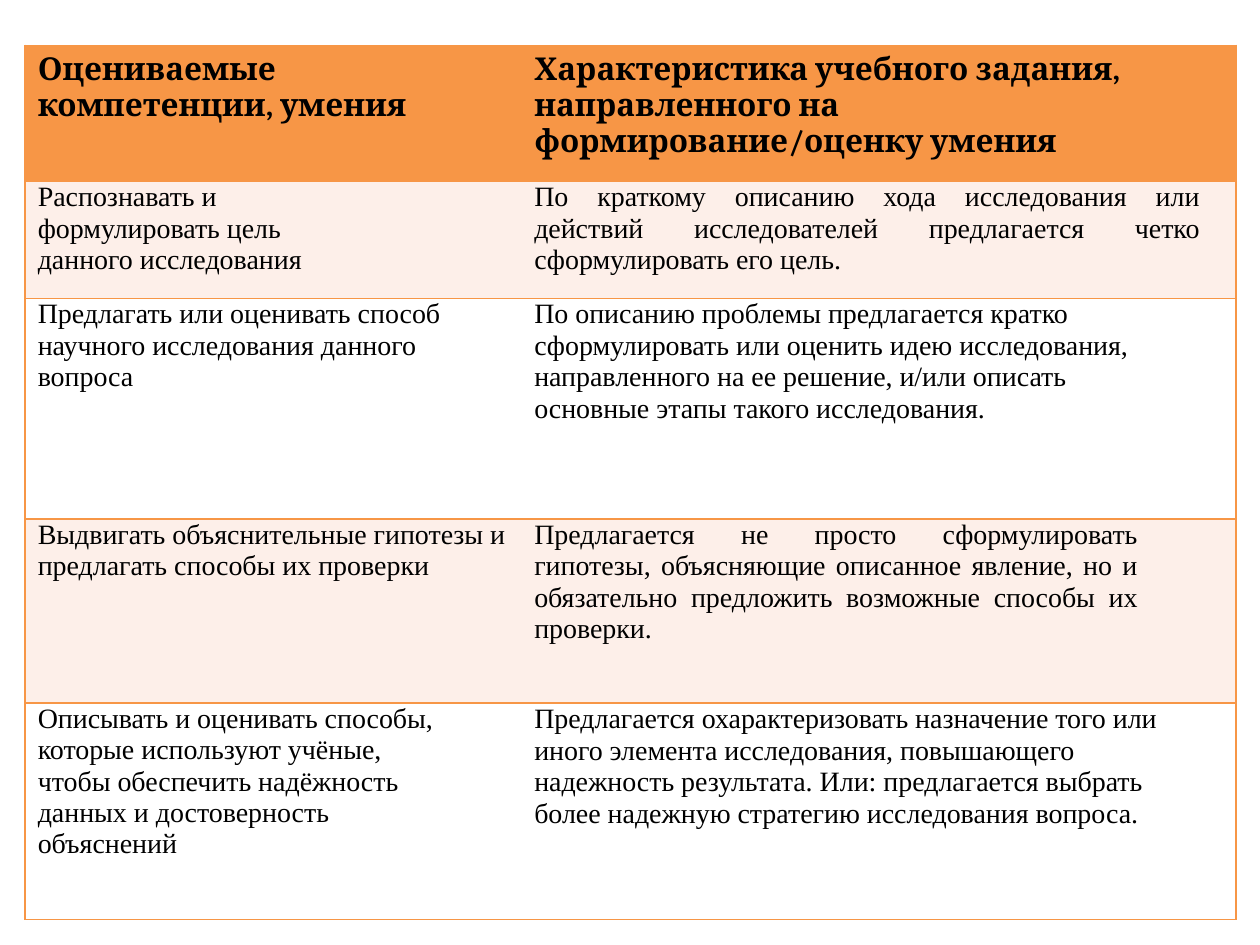
from lxml.etree import SubElement
from pptx import Presentation
from pptx.dml.color import RGBColor as RGB
from pptx.enum.text import PP_ALIGN as Align
from pptx.oxml.ns import qn
from pptx.util import Pt

THEME = dict(
    accent=RGB.from_string("F79646"), tint=RGB.from_string("FDEFE9"),
    white=RGB.from_string("FFFFFF"), ink=RGB.from_string("000000"),
    head_font="Cambria", body_font="Times New Roman", head_size=18, body_size=16,
)
NO_STYLE = "{2D5ABB26-0587-4C30-8999-92F81FD0307C}"

# Content
HEADERS = [
    "Оцениваемые компетенции, умения",
    "Характеристика учебного задания, направленного на формирование/оценку умения",
]
# Each cell: paragraphs as (text, space before, line spacing), right margin, alignment
ROWS = [
    [([("Распознавать и формулировать цель данного исследования", 2.5, 1.01)],
      103, Align.LEFT),
     ([("По краткому описанию хода исследования или действий исследователей "
        "предлагается четко сформулировать его цель.", 2.5, 1.01)],
      20.5, Align.JUSTIFY)],
    [([("Предлагать или оценивать способ научного исследования данного вопроса",
        3.5, 1.01)], 23, Align.LEFT),
     ([("По описанию проблемы предлагается кратко сформулировать или оценить "
        "идею исследования,", 3.5, 1.01),
       ("направленного на ее решение, и/или описать основные этапы такого "
        "исследования.", 0.1, 1.01)], 49, Align.LEFT)],
    [([("Выдвигать объяснительные гипотезы и предлагать способы их проверки",
        3.6, 1.01)], 0, Align.LEFT),
     ([("Предлагается не просто сформулировать гипотезы, объясняющие описанное "
        "явление, но и обязательно предложить возможные способы их проверки.",
        3.6, 1.01)], 56, Align.JUSTIFY)],
    [([("Описывать и оценивать способы, которые используют учёные, чтобы "
        "обеспечить надёжность данных и достоверность объяснений", 3.6, 1.01)],
      43, Align.LEFT),
     ([("Предлагается охарактеризовать назначение того или", 3.6, 1.0),
       ("иного элемента исследования, повышающего надежность результата. Или: "
        "предлагается выбрать более надежную стратегию исследования вопроса.",
        0.5, 1.01)], 29, Align.LEFT)],
]

# Geometry
LEFT, TOP, INSET = 14.4, 25.9, 7.2
COL_WIDTHS = [283.7, 408.2]
ROW_HEIGHTS = [77.8, 67, 126, 105.1, 123.8]


def write(p, text, *, font, size, bold=False, align=Align.LEFT, before=0, spacing=1.0):
    p.alignment, p.space_before, p.line_spacing = align, Pt(before), spacing
    r = p.add_run()
    r.text = text
    r.font.name, r.font.size, r.font.bold = font, Pt(size), bold
    r.font.color.rgb = THEME["ink"]


def set_margins(cell, left, top, right, bottom):
    cell.margin_left, cell.margin_top = Pt(left), Pt(top)
    cell.margin_right, cell.margin_bottom = Pt(right), Pt(bottom)


def add_borders(cell, sides):
    """Must run before the fill is set, as lines precede fills in the cell XML."""
    for side in sides:
        ln = SubElement(cell._tc.get_or_add_tcPr(), qn(f"a:ln{side}"), w=str(Pt(1)))
        fill = SubElement(ln, qn("a:solidFill"))
        SubElement(fill, qn("a:srgbClr"), val=str(THEME["accent"]))


def fill_cell(cell, color):
    cell.fill.solid()
    cell.fill.fore_color.rgb = color


def main():
    prs = Presentation()
    prs.slide_width, prs.slide_height = Pt(720), Pt(540)
    slide = prs.slides.add_slide(prs.slide_layouts[6])

    # Table grid
    table = slide.shapes.add_table(
        len(ROW_HEIGHTS), len(COL_WIDTHS), Pt(LEFT), Pt(TOP),
        Pt(sum(COL_WIDTHS)), Pt(sum(ROW_HEIGHTS))).table
    table.first_row = table.horz_banding = False
    table._tbl.tblPr.find(qn("a:tableStyleId")).text = NO_STYLE
    for col, width in zip(table.columns, COL_WIDTHS):
        col.width = Pt(width)
    for row, height in zip(table.rows, ROW_HEIGHTS):
        row.height = Pt(height)

    # Outer frame and row rules
    for row in table.rows:
        for cell, sides in zip(row.cells, ("LTB", "RTB")):
            add_borders(cell, sides)

    # Header row
    for cell, text in zip(table.rows[0].cells, HEADERS):
        fill_cell(cell, THEME["accent"])
        set_margins(cell, INSET, 3.6, INSET, 3.6)
        write(cell.text_frame.paragraphs[0], text, font=THEME["head_font"],
              size=THEME["head_size"], bold=True)

    # Body rows with alternating fills
    for i, content in enumerate(ROWS):
        for cell, (paragraphs, right, align) in zip(table.rows[i + 1].cells, content):
            fill_cell(cell, THEME["white" if i % 2 else "tint"])
            set_margins(cell, INSET, 0, right, 0)
            tf = cell.text_frame
            for n, (text, before, spacing) in enumerate(paragraphs):
                p = tf.add_paragraph() if n else tf.paragraphs[0]
                write(p, text, font=THEME["body_font"], size=THEME["body_size"],
                      align=align, before=before, spacing=spacing)

    prs.save("out.pptx")


if __name__ == "__main__":
    main()
